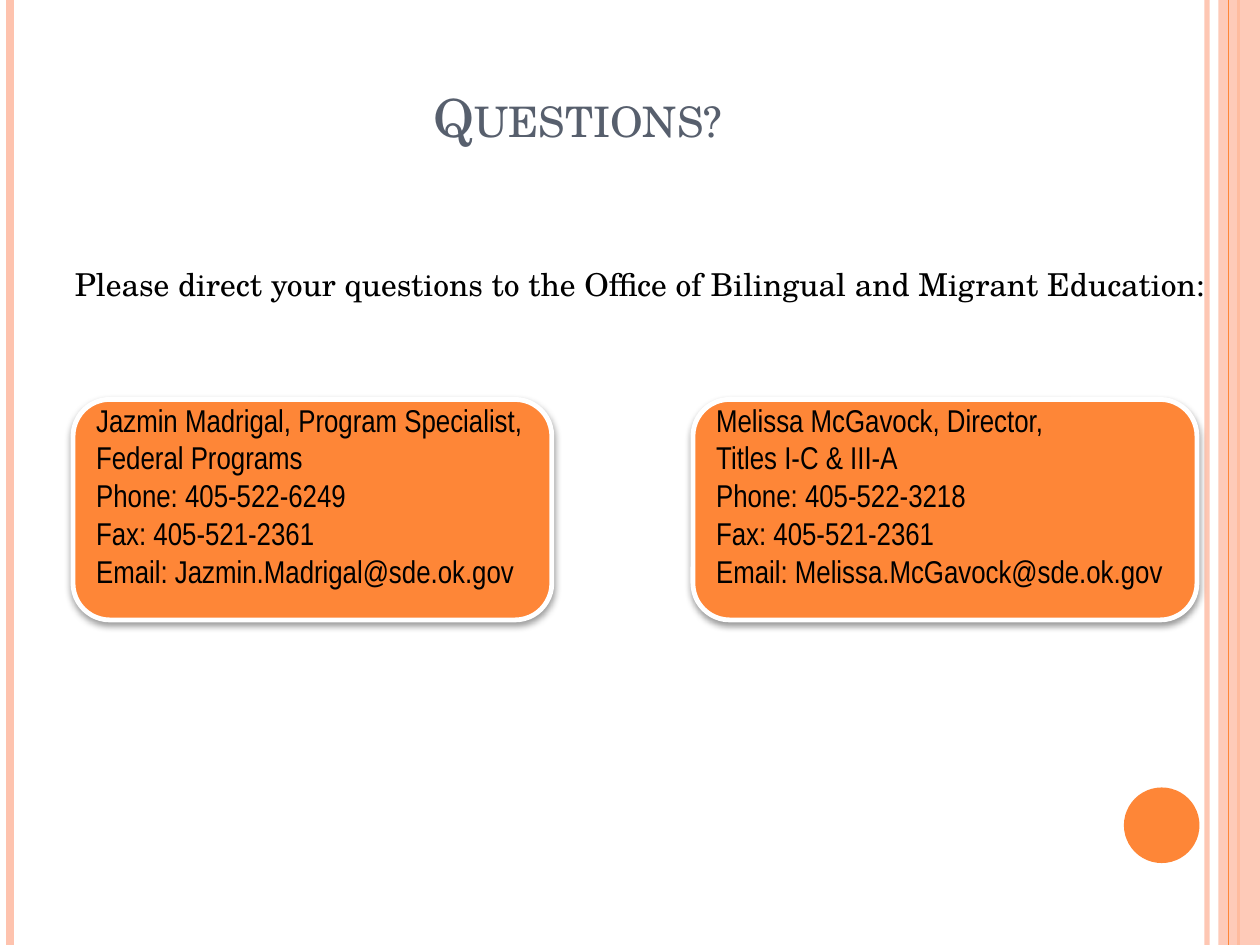
from lxml import etree
from pptx import Presentation
from pptx.dml.color import RGBColor
from pptx.enum import shapes, text
from pptx.oxml.ns import qn
from pptx.util import Inches, Pt

COLORS = {"orange": "FE8637", "peach": "FEC3AE", "slate": "575F6D",
          "black": "000000", "white": "FFFFFF"}
SERIF, NARROW = "TeX Gyre Schola", "Arial Narrow"


def rgb(name):
    return RGBColor.from_string(COLORS[name])


def add_alpha(fill_parent, percent):
    color = next(fill_parent.iter(qn("a:srgbClr")))
    etree.SubElement(color, qn("a:alpha"), val=str(percent * 1000))


class SlideBuilder:
    def __init__(self, prs):
        self.slide = prs.slides.add_slide(prs.slide_layouts[1])
        self.shapes = self.slide.shapes

    def format_runs(self, tf, size, font, color):
        for p in tf.paragraphs:
            for r in p.runs:
                r.font.size, r.font.name = Pt(size), font
                r.font.color.rgb = rgb(color)

    def rule(self, x, color, width, alpha=None):
        x = Inches(x)
        line = self.shapes.add_connector(
            shapes.MSO_CONNECTOR.STRAIGHT, x, 0, x, Inches(7.5))
        line.line.color.rgb, line.line.width = rgb(color), Pt(width)
        sp_pr = line._element.spPr
        if alpha:
            add_alpha(sp_pr, alpha)
        etree.SubElement(sp_pr, qn("a:effectLst"))

    def shape(self, kind, box, color, alpha=None):
        sp = self.shapes.add_shape(kind, *map(Inches, box))
        sp.shadow.inherit = False
        sp.fill.solid()
        sp.fill.fore_color.rgb = rgb(color)
        sp.line.fill.background()
        if alpha:
            add_alpha(sp._element.spPr, alpha)
        return sp

    def placeholder(self, sp, box, content, size, color):
        sp.left, sp.top, sp.width, sp.height = map(Inches, box)
        self.shapes._spTree.append(sp._element)  # in front of the decoration
        tf = sp.text_frame
        tf.text, tf.word_wrap = content, True
        tf.auto_size = text.MSO_AUTO_SIZE.NONE
        tf.paragraphs[0].alignment = text.PP_ALIGN.CENTER
        self.format_runs(tf, size, SERIF, color)
        return tf

    def title(self, box, content):
        tf = self.placeholder(self.shapes.title, box, content, 30, "slate")
        tf.vertical_anchor = text.MSO_ANCHOR.MIDDLE
        tf.paragraphs[0].runs[0].font._element.set("cap", "small")

    def body(self, box, content):
        tf = self.placeholder(self.slide.placeholders[1], box, content, 18, "black")
        tf.margin_top = Inches(0.4)
        p = tf.paragraphs[0]
        p.level, p.space_before = 2, Pt(0)
        p_pr = p._p.get_or_add_pPr()
        p_pr.set("marL", "0")
        p_pr.set("indent", "0")
        etree.SubElement(p_pr, qn("a:buNone"))

    def contact(self, box, lines):
        sp = self.shape(shapes.MSO_SHAPE.FLOWCHART_ALTERNATE_PROCESS, box, "orange")
        sp.line.color.rgb, sp.line.width = rgb("white"), Pt(2.75)
        # Soft shadow straight below the card
        effects = sp._element.spPr.find(qn("a:effectLst"))
        shadow = etree.SubElement(
            effects, qn("a:outerShdw"), blurRad=str(Pt(4)), dist=str(Pt(2)),
            dir="5400000", rotWithShape="0")
        etree.SubElement(shadow, qn("a:srgbClr"), val=COLORS["black"])
        add_alpha(shadow, 40)
        tf = sp.text_frame
        tf.text, tf.word_wrap = "\n".join(lines), True
        tf.vertical_anchor = text.MSO_ANCHOR.MIDDLE
        tf.margin_top, tf.margin_bottom = 0, Inches(0.23)
        for p in tf.paragraphs:
            p.alignment = text.PP_ALIGN.LEFT
        self.format_runs(tf, 18, NARROW, "black")


def main():
    prs = Presentation()
    prs.slide_width, prs.slide_height = Inches(10), Inches(7.5)
    s = SlideBuilder(prs)

    # Side decoration
    s.rule(9.58, "peach", 3, alpha=93)
    s.rule(0.08, "peach", 4.5)
    s.rule(9.83, "orange", 1.5)
    s.shape(shapes.MSO_SHAPE.RECTANGLE, (9.67, 0, 0.33, 7.5), "peach", alpha=87)
    s.rule(9.75, "orange", 0.75)
    s.shape(shapes.MSO_SHAPE.OVAL, (8.92, 6.25, 0.6, 0.6), "orange")

    # Title and introduction
    s.title((0.5, 0.3, 8.17, 1.25), "Questions?")
    s.body((0.33, 1.7, 9.5, 5.63),
           "Please direct your questions to the Office of Bilingual and Migrant Education:")

    # Contact cards
    s.contact((0.58, 3.17, 3.8, 1.75), [
        "Jazmin Madrigal, Program Specialist,", "Federal Programs",
        "Phone: 405-522-6249", "Fax: 405-521-2361",
        "Email: Jazmin.Madrigal@sde.ok.gov"])
    s.contact((5.5, 3.17, 4, 1.75), [
        "Melissa McGavock, Director,", "Titles I-C & III-A",
        "Phone: 405-522-3218", "Fax: 405-521-2361",
        "Email: Melissa.McGavock@sde.ok.gov"])

    prs.save("out.pptx")


if __name__ == "__main__":
    main()
